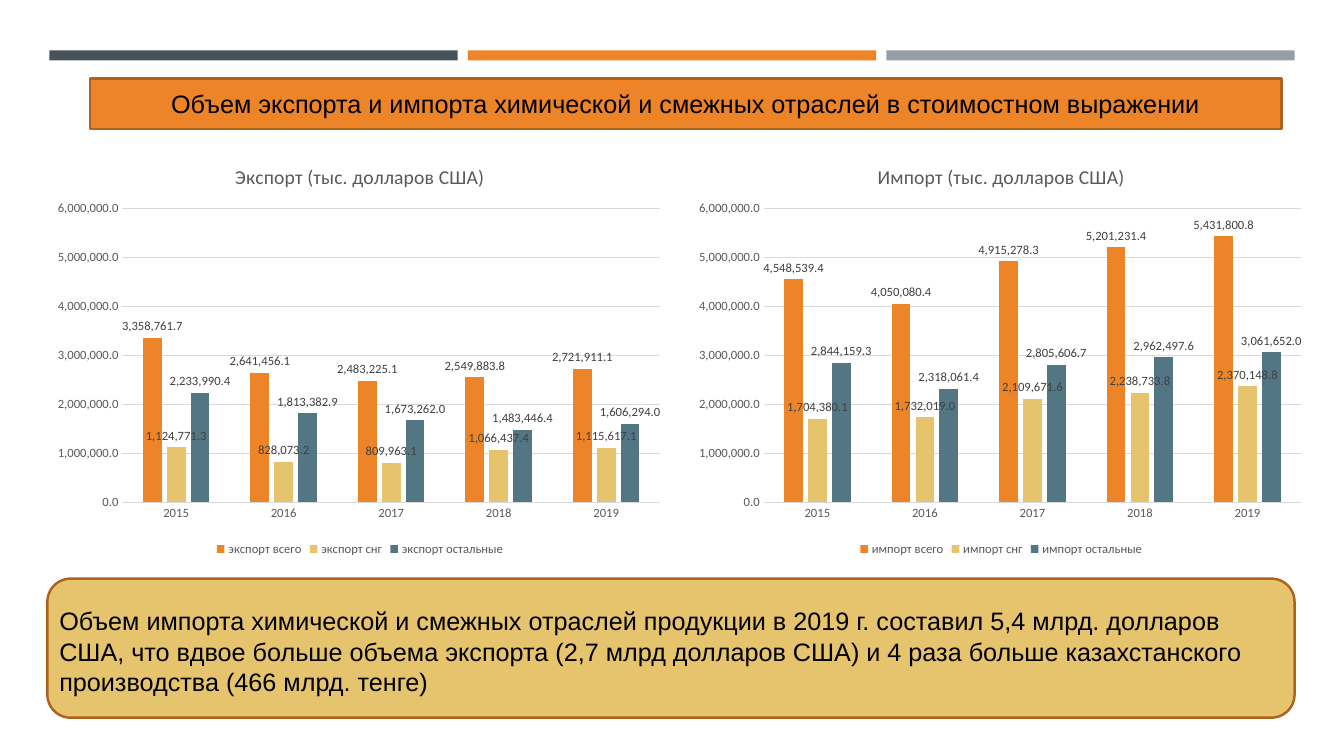
import pptx
import pptx.chart.data
import pptx.dml.color
import pptx.enum.chart
import pptx.enum.shapes
import pptx.enum.text
import pptx.oxml
import pptx.oxml.ns
import pptx.util
from pptx.util import Inches

COLORS = {
    "orange": "ED8428",
    "sand": "E6C46D",
    "teal": "537685",
    "slate": "465359",
    "silver": "969FA7",
    "brown": "AF621E",
    "black": "000000",
    "text": "595959",
    "label": "404040",
    "grid": "D9D9D9",
}
NUMBER_FORMAT = "#,##0.0"
YEARS = ["2015", "2016", "2017", "2018", "2019"]
EXPORTS = {
    "экспорт всего": [3358761.7, 2641456.1, 2483225.1, 2549883.8, 2721911.1],
    "экспорт снг": [1124771.3, 828073.2, 809963.1, 1066437.4, 1115617.1],
    "экспорт остальные": [2233990.4, 1813382.9, 1673262.0, 1483446.4, 1606294.0],
}
IMPORTS = {
    "импорт всего": [4548539.4, 4050080.4, 4915278.3, 5201231.4, 5431800.8],
    "импорт снг": [1704380.1, 1732019.0, 2109671.6, 2238733.8, 2370148.8],
    "импорт остальные": [2844159.3, 2318061.4, 2805606.7, 2962497.6, 3061652.0],
}


def color(name):
    return pptx.dml.color.RGBColor.from_string(COLORS[name])


def format_font(font, size, name, fill):
    font.size = pptx.util.Pt(size)
    font.name = name
    font.bold = False
    font.color.rgb = color(fill)


def write_text(frame, text, size=18, font="Arial", fill="black", align="LEFT", anchor="TOP"):
    frame.word_wrap = True
    frame.auto_size = pptx.enum.text.MSO_AUTO_SIZE.NONE
    frame.vertical_anchor = getattr(pptx.enum.text.MSO_ANCHOR, anchor)
    paragraph = frame.paragraphs[0]
    paragraph.alignment = getattr(pptx.enum.text.PP_ALIGN, align)
    run = paragraph.add_run()
    run.text = text
    format_font(run.font, size, font, fill)


class SlideBuilder:
    chart_font = "Calibri"
    line_width = pptx.util.Pt(1.75)
    series_fills = ("orange", "sand", "teal")

    def __init__(self, slide):
        self.slide = slide

    def paint(self, shape, fill, line=None):
        shape.fill.solid()
        shape.fill.fore_color.rgb = color(fill)
        if line:
            shape.line.color.rgb = color(line)
            shape.line.width = self.line_width
        else:
            shape.line.fill.background()

    def box(self, kind, left, top, width, height, fill, line=None):
        shape = self.slide.shapes.add_shape(
            getattr(pptx.enum.shapes.MSO_SHAPE, kind),
            Inches(left), Inches(top), Inches(width), Inches(height))
        shape.shadow.inherit = False
        self.paint(shape, fill, line)

    def title(self, text, left, top, width, height):
        shape = self.slide.shapes.title
        shape.left, shape.top = Inches(left), Inches(top)
        shape.width, shape.height = Inches(width), Inches(height)
        self.paint(shape, "orange", "brown")
        write_text(shape.text_frame, text, align="CENTER", anchor="MIDDLE")

    def text(self, text, left, top, width, height):
        shape = self.slide.shapes.add_textbox(
            Inches(left), Inches(top), Inches(width), Inches(height))
        write_text(shape.text_frame, text)

    def chart(self, title, series_values, left, top, width, height):
        data = pptx.chart.data.CategoryChartData(number_format=NUMBER_FORMAT)
        data.categories = YEARS
        for name, values in series_values.items():
            data.add_series(name, values)
        chart = self.slide.shapes.add_chart(
            pptx.enum.chart.XL_CHART_TYPE.COLUMN_CLUSTERED,
            Inches(left), Inches(top), Inches(width), Inches(height), data).chart
        format_font(chart.font, 10, self.chart_font, "black")
        chart.has_title = True
        write_text(chart.chart_title.text_frame, title, size=14,
                   font=self.chart_font, fill="text", align="CENTER")
        chart.chart_title.include_in_layout = False
        chart.has_legend = True
        chart.legend.position = pptx.enum.chart.XL_LEGEND_POSITION.BOTTOM
        chart.legend.include_in_layout = False
        format_font(chart.legend.font, 9, self.chart_font, "text")
        self.style_axes(chart)
        self.style_series(chart.plots[0])
        self.place_plot(chart, x=0.12, y=0.15, w=0.86, h=0.71)

    def style_axes(self, chart):
        for axis in (chart.category_axis, chart.value_axis):
            axis.major_tick_mark = pptx.enum.chart.XL_TICK_MARK.NONE
            axis.minor_tick_mark = pptx.enum.chart.XL_TICK_MARK.NONE
            format_font(axis.tick_labels.font, 9, self.chart_font, "text")
        value_axis = chart.value_axis
        value_axis.minimum_scale = 0
        value_axis.maximum_scale = 6000000
        value_axis.major_unit = 1000000
        value_axis.tick_labels.number_format = NUMBER_FORMAT
        value_axis.tick_labels.number_format_is_linked = False
        value_axis.format.line.fill.background()
        for line in (chart.category_axis.format.line, value_axis.major_gridlines.format.line):
            line.color.rgb = color("grid")
            line.width = pptx.util.Pt(0.75)

    def style_series(self, plot):
        plot.gap_width = 219
        plot.overlap = -27
        plot.vary_by_categories = False
        for series, fill in zip(plot.series, self.series_fills):
            series.format.fill.solid()
            series.format.fill.fore_color.rgb = color(fill)
            labels = series.data_labels
            labels.show_value = True
            labels.position = pptx.enum.chart.XL_LABEL_POSITION.OUTSIDE_END
            labels.number_format = NUMBER_FORMAT
            labels.number_format_is_linked = False
            format_font(labels.font, 9, self.chart_font, "label")

    def place_plot(self, chart, **fractions):
        plot_area = chart.plots[0]._element.getparent()
        for layout in plot_area.findall(pptx.oxml.ns.qn("c:layout")):
            plot_area.remove(layout)
        settings = {"layoutTarget": "inner", "xMode": "edge", "yMode": "edge", **fractions}
        content = "".join(f'<c:{key} val="{value}"/>' for key, value in settings.items())
        plot_area.insert(0, pptx.oxml.parse_xml(
            f'<c:layout {pptx.oxml.ns.nsdecls("c")}>'
            f'<c:manualLayout>{content}</c:manualLayout></c:layout>'))


def main():
    presentation = pptx.Presentation()
    presentation.slide_width = Inches(13.33)
    presentation.slide_height = Inches(7.5)
    builder = SlideBuilder(presentation.slides.add_slide(presentation.slide_layouts[5]))

    for index, fill in enumerate(("slate", "orange", "silver")):
        builder.box("RECTANGLE", 0.49 + index * 4.15, 0.5, 4.05, 0.1, fill)
    builder.title("Объем экспорта и импорта химической и смежных отраслей в стоимостном выражении",
                  0.89, 0.78, 11.82, 0.5)
    builder.chart("Экспорт (тыс. долларов США)", EXPORTS, 0.47, 1.45, 6.2, 4.11)
    builder.chart("Импорт (тыс. долларов США)", IMPORTS, 6.83, 1.45, 6.2, 4.11)
    builder.box("ROUNDED_RECTANGLE", 0.47, 5.74, 12.37, 1.38, "sand", "brown")
    builder.text("Объем импорта химической и смежных отраслей продукции в 2019 г. составил "
                 "5,4 млрд. долларов США, что вдвое больше объема экспорта (2,7 млрд долларов "
                 "США) и 4 раза больше казахстанского производства (466 млрд. тенге)",
                 0.49, 5.96, 12.37, 1.01)
    presentation.save("out.pptx")


if __name__ == "__main__":
    main()
